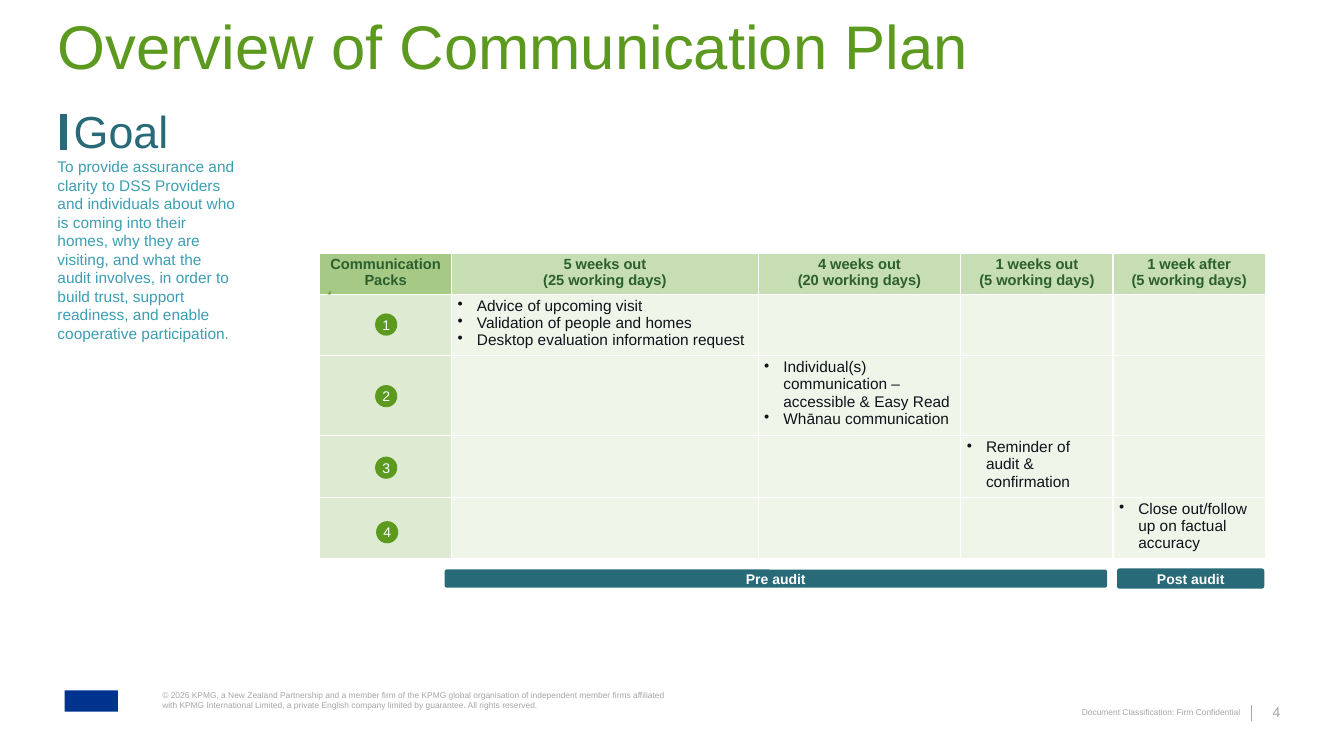
from dataclasses import dataclass

from lxml.etree import SubElement
from pptx import Presentation
from pptx.dml.color import RGBColor
from pptx.enum.shapes import MSO_CONNECTOR, MSO_SHAPE
from pptx.enum.text import MSO_ANCHOR, MSO_AUTO_SIZE, PP_ALIGN
from pptx.oxml.ns import qn
from pptx.util import Pt

SCALE = 9144


@dataclass(frozen=True)
class Theme:
    """Colours, font and type sizes of the slide."""
    face: str = "Arial"
    green: str = "5C991F"
    teal: str = "286A78"
    aqua: str = "3C9EB2"
    grey: str = "A6A6A6"
    navy: str = "00338D"
    white: str = "FFFFFF"
    ink: str = "0D1319"
    forest: str = "2B5F2E"
    corner: str = "A6C985"
    header: str = "C7DDB3"
    side: str = "DEEBD2"
    body: str = "EFF5E9"
    title: float = 44
    goal: float = 32
    text: float = 11
    head: float = 10.5
    label: float = 10
    small: float = 6


THEME = Theme()

HEADS = [
    "Communication Packs",
    "5 weeks out\n(25 working days)",
    "4 weeks out\n(20 working days)",
    "1 weeks out\n(5 working days)",
    "1 week after\n(5 working days)",
]
PACKS = [
    "Advice of upcoming visit\nValidation of people and homes\n"
    "Desktop evaluation information request",
    "Individual(s) communication – accessible & Easy Read\nWhānau communication",
    "Reminder of audit & confirmation",
    "Close out/follow up on factual accuracy",
]
COLS = [131, 304, 201, 151, 151]
ROWS = [39, 56, 75, 57, 57]
BADGES = [(372, 311), (372, 382), (372, 453), (373, 517)]
GOAL = (
    "To provide assurance and clarity to DSS Providers and individuals about who "
    "is coming into their homes, why they are visiting, and what the audit involves, "
    "in order to build trust, support readiness, and enable cooperative participation."
)
RIGHTS = (
    "© 2026 KPMG, a New Zealand Partnership and a member firm of the KPMG global "
    "organisation of independent member firms affiliated with KPMG International "
    "Limited, a private English company limited by guarantee. All rights reserved."
)


def px(*nums):
    """Turn pixel lengths into EMU."""
    return [num * SCALE for num in nums]


def apply(item, **values):
    """Set each given attribute on an item."""
    for name, value in values.items():
        setattr(item, name, value)


def write(frame, text, size, color, bold=False, align=PP_ALIGN.LEFT,
          space=None, bullet=False, **values):
    """Fill a text frame with one paragraph per line."""
    apply(frame, text=text, word_wrap=True, **values)
    for para in frame.paragraphs:
        if bullet:
            props = para._p.get_or_add_pPr()
            props.set("marL", str(19 * SCALE))
            props.set("indent", str(-19 * SCALE))
            SubElement(props, qn("a:buChar"), char="•")
        apply(para, alignment=align, line_spacing=space)
        apply(para.font, name=THEME.face, size=Pt(size), bold=bold)
        para.font.color.rgb = RGBColor.from_string(color)


def pad(item, side, edge):
    """Set equal side margins and equal top and bottom margins."""
    apply(item, margin_left=side * SCALE, margin_right=side * SCALE,
          margin_top=edge * SCALE, margin_bottom=edge * SCALE)


def label(slide, box, text, size, color, **values):
    """Add a text box without margins."""
    frame = slide.shapes.add_textbox(*px(*box)).text_frame
    pad(frame, 0, 0)
    write(frame, text, size, color, **values)


def paint(shape, color):
    """Give a shape a flat fill with no line or shadow."""
    shape.shadow.inherit = False
    shape.fill.solid()
    shape.fill.fore_color.rgb = RGBColor.from_string(color)
    shape.line.fill.background()


def block(slide, kind, box, color, text="", bold=False):
    """Add a flat shape with an optional centred label."""
    shape = slide.shapes.add_shape(kind, *px(*box))
    paint(shape, color)
    if text:
        pad(shape.text_frame, 0, 0)
        write(shape.text_frame, text, THEME.label, THEME.white, bold=bold,
              align=PP_ALIGN.CENTER, vertical_anchor=MSO_ANCHOR.MIDDLE)
    return shape


def rule(slide, x, top, end, color, width):
    """Add a vertical line."""
    line = slide.shapes.add_connector(MSO_CONNECTOR.STRAIGHT, *px(x, top, x, end))
    line.line.color.rgb = RGBColor.from_string(color)
    line.line.width = Pt(width)
    SubElement(line._element.spPr, qn("a:effectLst"))


def border(cell):
    """Draw white borders round a cell."""
    props = cell._tc.get_or_add_tcPr()
    for index, side in enumerate("LRTB"):
        line = SubElement(props, qn(f"a:ln{side}"), w=str(Pt(1)))
        fill = SubElement(line, qn("a:solidFill"))
        SubElement(fill, qn("a:srgbClr"), val=THEME.white)
        props.remove(line)
        props.insert(index, line)


def shade(row, col):
    """Choose the fill of a table cell."""
    if row == 0:
        return THEME.header if col else THEME.corner
    return THEME.body if col else THEME.side


def plan(slide):
    """Add the table of communication packs."""
    box = px(317, 251, sum(COLS), sum(ROWS))
    table = slide.shapes.add_table(len(ROWS), len(COLS), *box).table
    for col, width in zip(table.columns, COLS):
        col.width = width * SCALE
    for row, height in zip(table.rows, ROWS):
        row.height = height * SCALE
    for r in range(len(ROWS)):
        for c in range(len(COLS)):
            cell = table.cell(r, c)
            pad(cell, 6, 3)
            cell.fill.solid()
            cell.fill.fore_color.rgb = RGBColor.from_string(shade(r, c))
            border(cell)
            if r == 0:
                write(cell.text_frame, HEADS[c], THEME.head, THEME.forest,
                      bold=True, align=PP_ALIGN.CENTER)
            elif r == c:
                write(cell.text_frame, PACKS[r - 1], THEME.text, THEME.ink, bullet=True)


def goal(slide):
    """Place the goal heading, its bar and its text."""
    title = slide.shapes.title
    apply(title, **dict(zip(("left", "top", "width", "height"), px(49, 107, 346, 59))))
    pad(title.text_frame, 0, 0)
    write(title.text_frame, "Goal", THEME.goal, THEME.teal, space=0.7,
          margin_left=24 * SCALE, auto_size=MSO_AUTO_SIZE.NONE,
          vertical_anchor=MSO_ANCHOR.MIDDLE)
    rule(slide, 63, 113, 149, THEME.teal, 5)
    label(slide, (57, 156, 179, 185), GOAL, THEME.text, THEME.aqua)


def footer(slide):
    """Place the footer items."""
    block(slide, MSO_SHAPE.RECTANGLE, (64, 685, 53, 21), THEME.navy)
    label(slide, (161, 685, 506, 20), RIGHTS, THEME.small, THEME.grey)
    label(slide, (1026, 702, 204, 10), "Document Classification: Firm Confidential",
          THEME.small, THEME.grey, align=PP_ALIGN.RIGHT)
    rule(slide, 1241, 699, 715, THEME.grey, 0.5)
    label(slide, (1243, 699, 27, 16), "4", THEME.label, THEME.grey,
          align=PP_ALIGN.RIGHT, vertical_anchor=MSO_ANCHOR.BOTTOM)


def main():
    """Build and save the slide."""
    deck = Presentation()
    deck.slide_width, deck.slide_height = px(1333, 750)
    slide = deck.slides.add_slide(deck.slide_layouts[5])
    footer(slide)
    goal(slide)
    label(slide, (57, 25, 1205, 58), "Overview of Communication Plan",
          THEME.title, THEME.green, space=0.7, vertical_anchor=MSO_ANCHOR.MIDDLE)
    plan(slide)
    for text, box in (("Pre audit", (441, 565, 657, 18)),
                      ("Post audit", (1108, 564, 146, 20))):
        bar = block(slide, MSO_SHAPE.ROUNDED_RECTANGLE, box, THEME.teal, text, True)
        bar.adjustments[0] = 0.12
    for num, (x, y) in enumerate(BADGES, 1):
        block(slide, MSO_SHAPE.OVAL, (x, y, 22, 22), THEME.green, str(num))
    speck = slide.shapes.build_freeform(325, 292, SCALE)
    speck.add_line_segments([(327, 290), (328, 288), (328, 292)])
    paint(speck.convert_to_shape(), THEME.green)
    deck.save("out.pptx")


if __name__ == "__main__":
    main()
